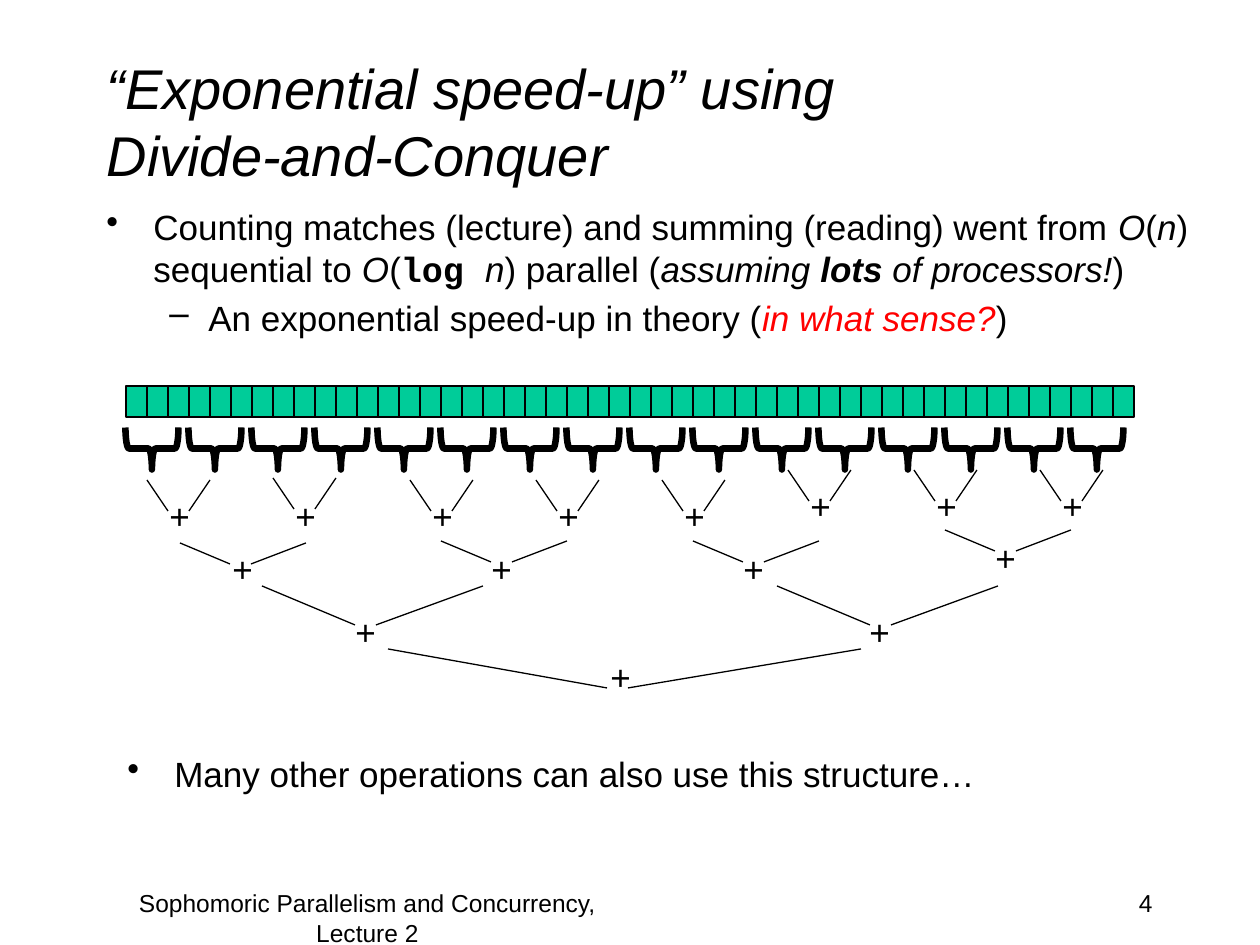
import pptx
import pptx.util
from pptx.dml.color import RGBColor
from pptx.enum.shapes import MSO_CONNECTOR, MSO_SHAPE
from pptx.enum.text import MSO_ANCHOR, MSO_AUTO_SIZE, PP_ALIGN
from pptx.oxml.xmlchemy import OxmlElement

PX = 914400 // 126  # EMU per px
BLACK = RGBColor(0x00, 0x00, 0x00)
RED = RGBColor(0xFF, 0x00, 0x00)
GREEN = RGBColor(0x00, 0xCC, 0x99)

# Content: a paragraph is a list of (text, format) spans
TITLE = [[("“Exponential speed-up” using\vDivide-and-Conquer", "i")]]
POINTS = [
    [("Counting matches (lecture) and summing (reading) went from ", ""),
     ("O", "i"), ("(", ""), ("n", "i"), (") sequential to ", ""),
     ("O", "i"), ("(", ""), ("log ", "bm"), ("n", "i"), (") parallel (", ""),
     ("assuming ", "i"), ("lots", "bi"), (" of processors!", "i"), (")", "")],
    [("An exponential speed-up in theory (", ""),
     ("in what sense?", "ir"), (")", "")],
]
CLOSING = [[("Many other operations can also use this structure…", "")]]
FOOTER = [[("Sophomoric Parallelism and Concurrency, Lecture 2", "")]]
NUMBER = [[("4", "")]]
PLUS = [[("+", "")]]

# Bullet character, text margin, hanging indent
BULLET = ("•", 47, -47)
DASH = ("–", 102, -39)

# Array and braces
CELL_COUNT, CELL_WIDTH, CELLS_PER_BRACE = 48, 21, 3
ARRAY_LEFT, ARRAY_TOP, CELL_HEIGHT = 126, 386, 31

# Tree levels: width between upper ends, offset of the left foot, drop,
# and joins as (left, top, plus left, plus top)
FOOT_GAP = 21
LEVELS = [
    (63, 21, 31, [(147, 480, 157, 488), (273, 478, 283, 488),
                  (410, 480, 420, 488), (536, 480, 546, 488),
                  (662, 480, 672, 488), (788, 470, 798, 478),
                  (914, 470, 924, 478), (1040, 470, 1050, 478)]),
    (126, 50, 21, [(180, 543, 220, 541), (441, 541, 479, 541),
                   (693, 541, 731, 541), (945, 530, 983, 530)]),
    (221, 93, 39, [(262, 586, 343, 604), (777, 586, 857, 604)]),
    (473, 219, 39, [(388, 649, 598, 649)]),
]


def set_bullet(para, char, margin, indent):
    props = para._p.get_or_add_pPr()
    props.set("marL", str(margin * PX))
    props.set("indent", str(indent * PX))
    bullet = OxmlElement("a:buChar")
    bullet.set("char", char)
    props.append(bullet)


def write(shape, paras, size=20, align=PP_ALIGN.LEFT, anchor=MSO_ANCHOR.TOP,
          wrap=True, bullets=()):
    frame = shape.text_frame
    frame.auto_size = MSO_AUTO_SIZE.NONE
    frame.word_wrap = wrap
    frame.vertical_anchor = anchor
    for index, spans in enumerate(paras):
        para = frame.paragraphs[0] if index == 0 else frame.add_paragraph()
        para.alignment = align
        if bullets:
            para.level = index
            para.space_before = pptx.util.Pt(size * 0.2)
            set_bullet(para, *bullets[index])
        for text, style in spans:
            if "\v" in text:
                first, text = text.split("\v")
                add_span(para, first, style, size)
                para.add_line_break()
            add_span(para, text, style, size)


def add_span(para, text, style, size):
    span = para.add_run()
    span.text = text
    span.font.size = pptx.util.Pt(size)
    span.font.name = "Courier New" if "m" in style else "Arial"
    span.font.bold = "b" in style
    span.font.italic = "i" in style
    span.font.color.rgb = RED if "r" in style else BLACK


def add_text(page, left, top, width, height, paras, **style):
    box = page.shapes.add_textbox(left * PX, top * PX, width * PX, height * PX)
    write(box, paras, **style)


def add_outline(page, kind, left, top, width, height, weight, fill=None):
    shape = page.shapes.add_shape(kind, left * PX, top * PX, width * PX, height * PX)
    shape.shadow.inherit = False
    if fill is None:
        shape.fill.background()
    else:
        shape.fill.solid()
        shape.fill.fore_color.rgb = fill
    shape.line.color.rgb = BLACK
    shape.line.width = pptx.util.Pt(weight)
    return shape


def add_line(page, x1, y1, x2, y2):
    line = page.shapes.add_connector(
        MSO_CONNECTOR.STRAIGHT, x1 * PX, y1 * PX, x2 * PX, y2 * PX)
    line.line.color.rgb = BLACK
    line.line.width = pptx.util.Pt(0.75)
    line._element.spPr.append(OxmlElement("a:effectLst"))


def main():
    deck = pptx.Presentation()
    deck.slide_width = pptx.util.Inches(10)
    deck.slide_height = pptx.util.Inches(7.5)
    page = deck.slides.add_slide(deck.slide_layouts[5])

    # Title and text
    title = page.shapes.title
    title.left, title.top, title.width, title.height = (
        n * PX for n in (94, 42, 1071, 157))
    write(title, TITLE, size=32, anchor=MSO_ANCHOR.MIDDLE)
    add_text(page, 94, 199, 1124, 157, POINTS, bullets=(BULLET, DASH))
    add_text(page, 115, 746, 1071, 105, CLOSING, bullets=(BULLET,))
    add_text(page, 84, 882, 567, 63, FOOTER, size=14, align=PP_ALIGN.CENTER)
    add_text(page, 903, 882, 262, 63, NUMBER, size=14, align=PP_ALIGN.RIGHT)

    # Array cells, with a brace under each group
    for index in range(CELL_COUNT):
        left = ARRAY_LEFT + index * CELL_WIDTH
        add_outline(page, MSO_SHAPE.RECTANGLE, left, ARRAY_TOP,
                    CELL_WIDTH, CELL_HEIGHT, 0.75, fill=GREEN)
        if index % CELLS_PER_BRACE == 0:
            brace = add_outline(page, MSO_SHAPE.LEFT_BRACE, left + 5, 422, 42, 53, 3.75)
            brace.rotation = 270

    # Tree of additions
    for span, foot, drop, joins in LEVELS:
        for left, top, plus_left, plus_top in joins:
            add_line(page, left, top, left + foot, top + drop)
            add_line(page, left + span, top, left + foot + FOOT_GAP, top + drop)
            add_text(page, plus_left, plus_top, 45, 55, PLUS, wrap=False)

    deck.save("out.pptx")


if __name__ == "__main__":
    main()
